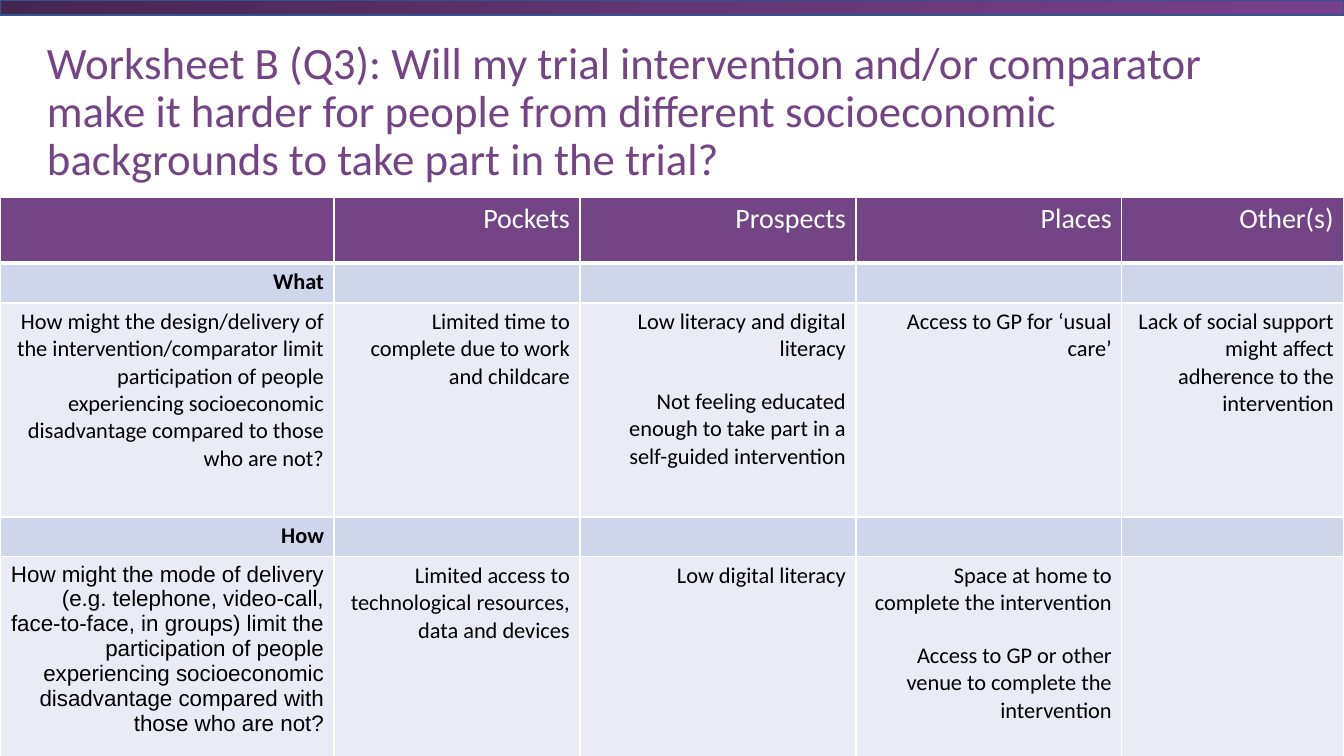
from copy import deepcopy

from lxml import etree
from pptx import Presentation
from pptx import util as u
from pptx.dml import color
from pptx.enum import shapes, text
from pptx.oxml import ns

PX = 914400 / 100.8  # EMU in one px
PURPLE, BAND, PALE, WHITE, BLACK = "734586", "CFD5EA", "E9EBF5", "FFFFFF", "000000"
BAR_STOPS = ["442550", "623674", "75408B"]

TITLE = ("Worksheet B (Q3): Will my trial intervention and/or comparator make it harder "
         "for people from different socioeconomic backgrounds to take part in the trial?")
COLUMNS = [334, 246, 276, 266, 222]
# Each row: height, fill, text format, cell texts (a newline starts a paragraph)
HEADER = dict(size=20, hue=WHITE)
SECTION = dict(size=16, bold=True)
ANSWER = dict(size=16)
ROWS = [
    (66, PURPLE, HEADER, ["", "Pockets", "Prospects", "Places", "Other(s)"]),
    (40, BAND, SECTION, ["What", "", "", "", ""]),
    (214, PALE, ANSWER, [
        "How might the design/delivery of the intervention/comparator limit participation of "
        "people experiencing socioeconomic disadvantage compared to those who are not?",
        "Limited time to complete due to work and childcare",
        "Low literacy and digital literacy\n"
        "Not feeling educated enough to take part in a self-guided intervention",
        "Access to GP for ‘usual care’",
        "Lack of social support might affect adherence to the intervention"]),
    (40, BAND, SECTION, ["How", "", "", "", ""]),
    (225, PALE, ANSWER, [
        "How might the mode of delivery (e.g. telephone, video-call, face-to-face, in groups) "
        "limit the participation of people experiencing socioeconomic disadvantage compared "
        "with those who are not?",
        "Limited access to technological resources, data and devices",
        "Low digital literacy",
        "Space at home to complete the intervention\n"
        "Access to GP or other venue to complete the intervention",
        ""]),
]


def px(n):
    return u.Emu(round(n * PX))


def rgb(value):
    return color.RGBColor.from_string(value)


def write(tf, content, size=16, hue=BLACK, bold=False, font="Calibri", align=None,
          spacing=None, gap=18):
    for i, line in enumerate(content.split("\n")):
        p = tf.add_paragraph() if i else tf.paragraphs[0]
        p.alignment = align
        p.line_spacing = spacing
        if i:
            p.space_before = u.Pt(gap)
        if not line:
            # An empty cell keeps the row's text size
            p._p.get_or_add_endParaRPr().set("sz", str(size * 100))
            continue
        r = p.add_run()
        r.text = line
        r.font.size, r.font.bold, r.font.name = u.Pt(size), bold, font
        r.font.color.rgb = rgb(hue)


def add_bar(s, x, y, w, h):
    bar = s.shapes.add_shape(shapes.MSO_SHAPE.RECTANGLE, px(x), px(y), px(w), px(h))
    bar.shadow.inherit = False
    bar.line.color.rgb = rgb("32538F")
    bar.line.width = u.Pt(1)
    bar.fill.gradient()
    bar.fill.gradient_angle = 315
    stops = bar._element.spPr.find(".//" + ns.qn("a:gsLst"))
    stops.insert(1, deepcopy(stops[0]))
    for i, (stop, hue) in enumerate(zip(bar.fill.gradient_stops, BAR_STOPS)):
        stop.position = i / 2
        stop.color.rgb = rgb(hue)


def add_title(s, x, y, w, h):
    title = s.shapes.title
    title.left, title.top, title.width, title.height = px(x), px(y), px(w), px(h)
    tf = title.text_frame
    tf.word_wrap = True
    tf.auto_size = text.MSO_AUTO_SIZE.NONE
    tf.vertical_anchor = text.MSO_ANCHOR.MIDDLE
    tf.margin_left = tf.margin_right = tf.margin_top = tf.margin_bottom = px(5)
    write(tf, TITLE, size=32, hue=PURPLE, align=text.PP_ALIGN.LEFT, spacing=0.9)


def set_borders(cell, bottom):
    tcPr = cell._tc.get_or_add_tcPr()
    for tag, points in (("lnL", 1), ("lnR", 1), ("lnT", 1), ("lnB", bottom)):
        ln = etree.SubElement(tcPr, ns.qn("a:" + tag), w=str(u.Pt(points)))
        fill = etree.SubElement(ln, ns.qn("a:solidFill"))
        etree.SubElement(fill, ns.qn("a:srgbClr"), val=WHITE)


def add_worksheet(s, x, y):
    w, h = sum(COLUMNS), sum(row[0] for row in ROWS)
    table = s.shapes.add_table(len(ROWS), len(COLUMNS), px(x), px(y), px(w), px(h)).table
    table.horz_banding = False
    table.first_row = False
    for column, width in zip(table.columns, COLUMNS):
        column.width = px(width)
    for i, (height, fill, style, texts) in enumerate(ROWS):
        table.rows[i].height = px(height)
        for j, content in enumerate(texts):
            cell = table.cell(i, j)
            set_borders(cell, bottom=1 if i else 3)
            cell.fill.solid()
            cell.fill.fore_color.rgb = rgb(fill)
            # The last question is set in Arial
            font = "Arial" if (i, j) == (len(ROWS) - 1, 0) else "Calibri"
            write(cell.text_frame, content, font=font, align=text.PP_ALIGN.RIGHT, **style)


def main():
    prs = Presentation()
    prs.slide_width, prs.slide_height = px(1344), px(756)
    s = prs.slides.add_slide(prs.slide_layouts[5])
    add_bar(s, 0, 0, 1344, 15)
    add_title(s, 42, 40, 1261, 146)
    add_worksheet(s, 0, 197)
    prs.save("out.pptx")


if __name__ == "__main__":
    main()
